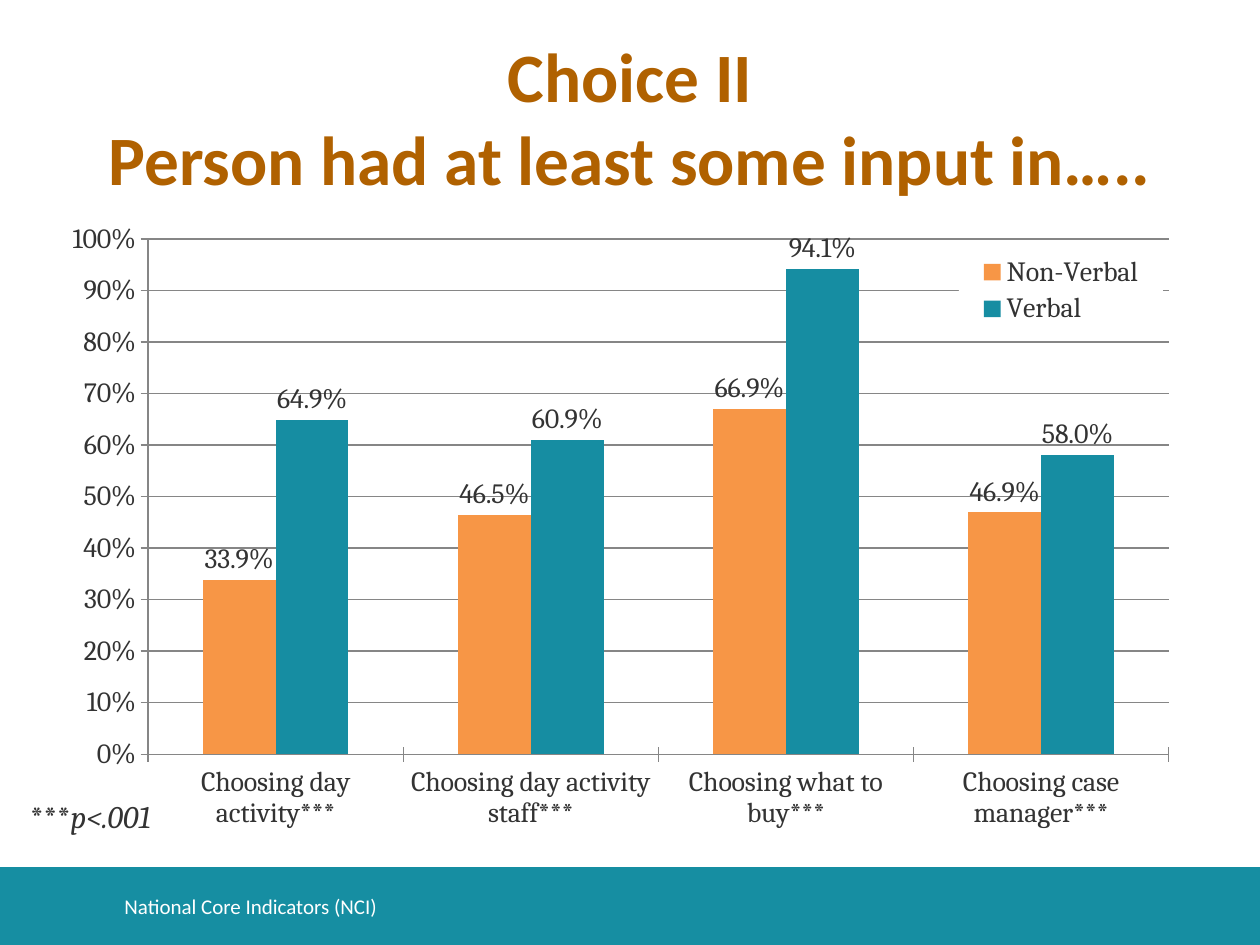
from lxml import etree
from pptx import Presentation
from pptx.chart.data import CategoryChartData
from pptx.dml.color import RGBColor
from pptx.enum.chart import (XL_CHART_TYPE, XL_LABEL_POSITION,
                             XL_LEGEND_POSITION, XL_TICK_MARK)
from pptx.enum.shapes import MSO_SHAPE
from pptx.enum.text import MSO_ANCHOR, PP_ALIGN
from pptx.oxml import parse_xml
from pptx.oxml.ns import qn
from pptx.util import Cm, Pt

COLUMN = XL_CHART_TYPE.COLUMN_CLUSTERED
OUTSIDE = XL_LABEL_POSITION.OUTSIDE_END
RIGHT = XL_LEGEND_POSITION.RIGHT
CROSS, NONE = XL_TICK_MARK.CROSS, XL_TICK_MARK.NONE
RECT = MSO_SHAPE.RECTANGLE
MIDDLE, TOP = MSO_ANCHOR.MIDDLE, MSO_ANCHOR.TOP
LEFT, CENTER = PP_ALIGN.LEFT, PP_ALIGN.CENTER

TEAL, ORANGE, BROWN = "168EA2", "F79646", "B06100"
DARK, GRAY, WHITE = "333333", "868686", "FFFFFF"

CATS = ["Choosing day activity***", "Choosing day activity staff***",
        "Choosing what to buy***", "Choosing case manager***"]
SERIES = [("Non-Verbal", [0.339, 0.465, 0.669, 0.469], ORANGE),
          ("Verbal", [0.649, 0.609, 0.941, 0.58], "168DA2")]


def color(code):
    return RGBColor.from_string(code)


def style(font, size, code, name):
    font.size, font.name = Pt(size), name
    font.color.rgb = color(code)


def add_band(slide, x, y, w, h, code):
    band = slide.shapes.add_shape(RECT, Cm(x), Cm(y), Cm(w), Cm(h))
    band.shadow.inherit = False
    band.fill.solid()
    band.fill.fore_color.rgb = color(code)
    band.line.fill.background()


def add_text(slide, x, y, w, h, text, size, code, name,
             anchor=MIDDLE, align=LEFT):
    box = slide.shapes.add_textbox(Cm(x), Cm(y), Cm(w), Cm(h))
    frame = box.text_frame
    frame.word_wrap = True
    frame.vertical_anchor = anchor
    frame.text = text
    para = frame.paragraphs[0]
    para.alignment = align
    for run in para.runs:
        style(run.font, size, code, name)
    return para


def set_place(part, index, x, y, w, h, inner=False):
    """Give a chart part a fixed place, in fractions of the chart."""
    for old in part.findall(qn("c:layout")):
        part.remove(old)
    layout = etree.Element(qn("c:layout"))
    manual = etree.SubElement(layout, qn("c:manualLayout"))
    items = [("layoutTarget", "inner")] if inner else []
    items += [("xMode", "edge"), ("yMode", "edge"),
              ("x", x), ("y", y), ("w", w), ("h", h)]
    for tag, val in items:
        etree.SubElement(manual, qn("c:" + tag)).set("val", str(val))
    part.insert(index, layout)


def format_axis(axis):
    axis.major_tick_mark, axis.minor_tick_mark = CROSS, NONE
    axis.format.line.color.rgb = color(GRAY)
    style(axis.tick_labels.font, 16, DARK, "Cambria")


def add_legend(chart):
    chart.has_legend = True
    legend = chart.legend
    legend.position = RIGHT
    legend.include_in_layout = False
    style(legend.font, 16, DARK, "Cambria")
    part = legend._element
    set_place(part, 1, 0.79, 0.05, 0.18, 0.13)
    fill = parse_xml(
        '<c:spPr xmlns:c="http://schemas.openxmlformats.org/drawingml/2006/chart" '
        'xmlns:a="http://schemas.openxmlformats.org/drawingml/2006/main">'
        f'<a:solidFill><a:srgbClr val="{WHITE}"/></a:solidFill></c:spPr>')
    part.find(qn("c:txPr")).addprevious(fill)


def add_bars(slide, x, y, w, h):
    data = CategoryChartData(number_format="0.0%")
    data.categories = CATS
    for name, vals, _ in SERIES:
        data.add_series(name, vals)
    chart = slide.shapes.add_chart(
        COLUMN, Cm(x), Cm(y), Cm(w), Cm(h), data).chart
    chart.has_title = False
    style(chart.font, 10, DARK, "Cambria")

    # Axes
    axis = chart.value_axis
    axis.minimum_scale, axis.maximum_scale, axis.major_unit = 0, 1, 0.1
    axis.tick_labels.number_format = "0%"
    axis.tick_labels.number_format_is_linked = False
    axis.major_gridlines.format.line.color.rgb = color(GRAY)
    format_axis(axis)
    format_axis(chart.category_axis)

    # Columns and their labels
    plot = chart.plots[0]
    plot.gap_width, plot.overlap = 150, 0
    plot.vary_by_categories = False
    for bars, (_, _, code) in zip(plot.series, SERIES):
        bars.format.fill.solid()
        bars.format.fill.fore_color.rgb = color(code)
        labels = bars.data_labels
        labels.show_value = True
        labels.position = OUTSIDE
        labels.number_format = "0.0%"
        labels.number_format_is_linked = False
        style(labels.font, 16, DARK, "Cambria")

    area = chart._chartSpace.find(".//" + qn("c:plotArea"))
    set_place(area, 0, 0.075, 0.03, 0.9, 0.85, inner=True)
    add_legend(chart)


def main():
    deck = Presentation()
    deck.slide_width, deck.slide_height = Cm(25.4), Cm(19.05)
    slide = deck.slides.add_slide(deck.slide_layouts[6])

    # Footer
    add_band(slide, 0, 17.48, 25.4, 1.57, TEAL)
    add_text(slide, 2.26, 17.75, 18.8, 1.02, "National Core Indicators (NCI)",
             12, WHITE, "Calibri")

    # Title
    title = add_text(slide, 1.27, 0.76, 22.86, 3.18,
                     "Choice II\vPerson had at least some input in…..",
                     39.6, BROWN, "Calibri", align=CENTER)
    for run in title.runs:
        run.font.bold = True

    # Chart
    add_bars(slide, 1.27, 4.45, 22.86, 12.27)

    # Significance note
    note = add_text(slide, 0.36, 15.95, 4.8, 1.8, "***", 18, DARK, "Cambria",
                    anchor=TOP)
    run = note.add_run()
    run.text = "p<.001"
    style(run.font, 18, DARK, "Cambria")
    run.font.italic = True

    deck.save("out.pptx")


if __name__ == "__main__":
    main()
